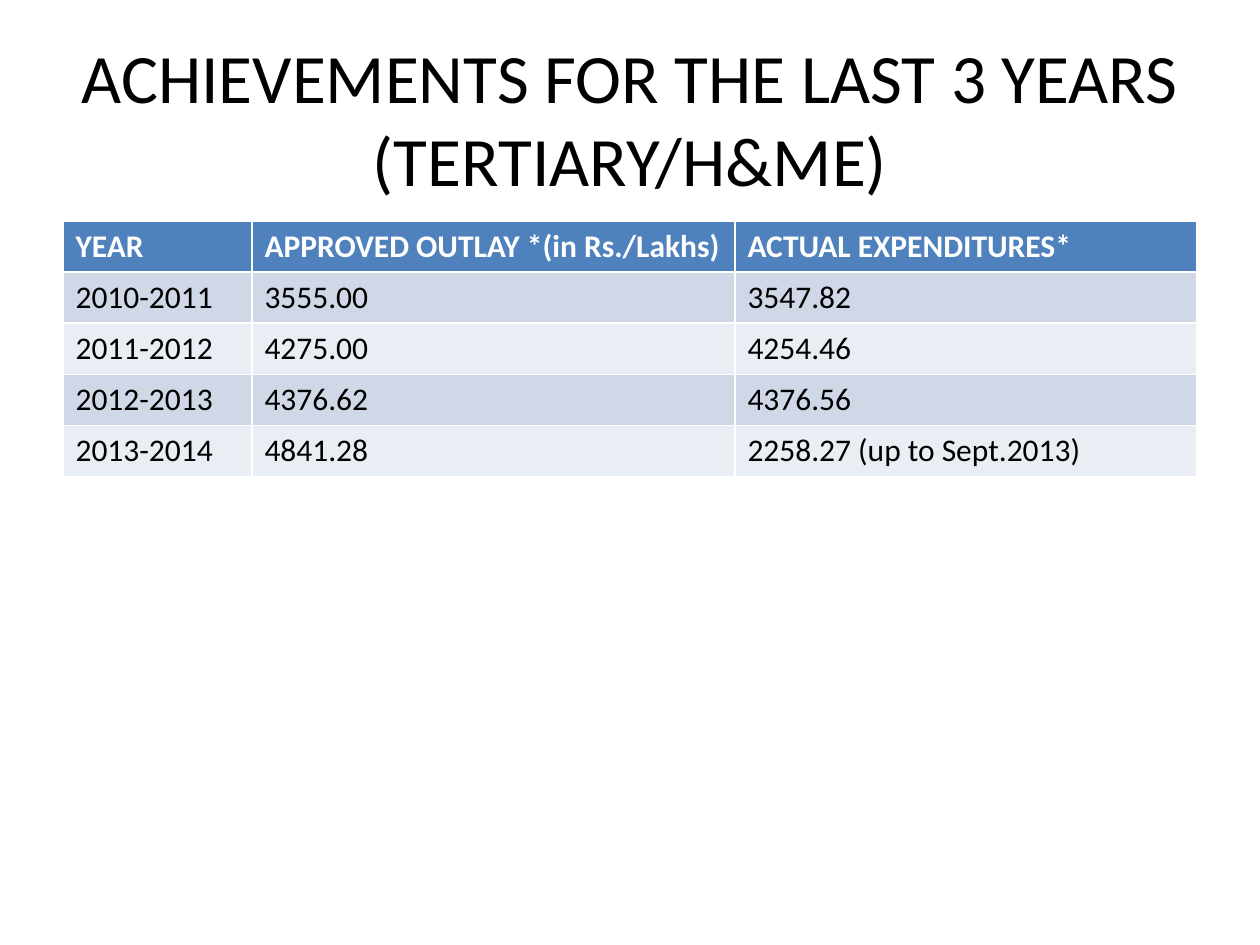
from lxml.etree import SubElement
from pptx import Presentation
from pptx.dml.color import RGBColor
from pptx.enum.text import MSO_ANCHOR as ANCHOR, PP_ALIGN as ALIGN
from pptx.oxml.ns import qn
from pptx.util import Pt

PX = 914400 // 126


def px(n):
    """Turn whole pixels into EMU."""
    return n * PX


def rgb(value):
    """Turn a hex string into a colour."""
    return RGBColor.from_string(value)


def write(tf, text, size=18, color="000000", bold=False, align=ALIGN.LEFT, font="Calibri"):
    """Put formatted text into the first paragraph of a text frame."""
    p = tf.paragraphs[0]
    p.text = text
    p.alignment = align
    for r in p.runs:
        r.font.name = font
        r.font.size = Pt(size)
        r.font.bold = bold
        r.font.color.rgb = rgb(color)
    for br in p._p.iter(qn("a:br")):
        SubElement(br, qn("a:rPr")).set("sz", str(round(size * 100)))


class Deck:
    """Hold the table style and the current slide."""

    header_fill = "4F81BD"
    header_text = "FFFFFF"
    band_fills = ("D0D8E8", "E9EDF4")

    def __init__(self, prs):
        """Add a title-only slide."""
        self.s = prs.slides.add_slide(prs.slide_layouts[5])

    def title(self, text, x, y, w, h, size):
        """Move and fill the title placeholder."""
        sp = self.s.shapes.title
        sp.left, sp.top, sp.width, sp.height = map(px, (x, y, w, h))
        tf = sp.text_frame
        tf.word_wrap = True
        tf.vertical_anchor = ANCHOR.MIDDLE
        write(tf, text, size=size, align=ALIGN.CENTER)

    def table(self, rows, x, y, widths, row_h):
        """Add a table with a header row and banded body rows."""
        frame = self.s.shapes.add_table(
            len(rows), len(widths), px(x), px(y), px(sum(widths)), px(row_h * len(rows)))
        table = frame.table
        for column, width in zip(table.columns, widths):
            column.width = px(width)
        for i, row in enumerate(rows):
            header = i == 0
            fill = self.header_fill if header else self.band_fills[(i - 1) % 2]
            color = self.header_text if header else "000000"
            for j, text in enumerate(row):
                cell = table.cell(i, j)
                cell.fill.solid()
                cell.fill.fore_color.rgb = rgb(fill)
                write(cell.text_frame, text, color=color, bold=header)


def main():
    """Build and save the slide."""
    prs = Presentation()
    prs.slide_width, prs.slide_height = px(1260), px(945)
    deck = Deck(prs)
    deck.title("ACHIEVEMENTS FOR THE LAST 3 YEARS\n(TERTIARY/H&ME)", 63, 38, 1134, 158, 39.6)
    deck.table([
        ("YEAR", "APPROVED OUTLAY *(in Rs./Lakhs)", "ACTUAL EXPENDITURES*"),
        ("2010-2011", "3555.00", "3547.82"),
        ("2011-2012", "4275.00", "4254.46"),
        ("2012-2013", "4376.62", "4376.56"),
        ("2013-2014", "4841.28", "2258.27 (up to Sept.2013)"),
    ], 63, 221, (189, 483, 462), 51)
    prs.save("out.pptx")


if __name__ == "__main__":
    main()
